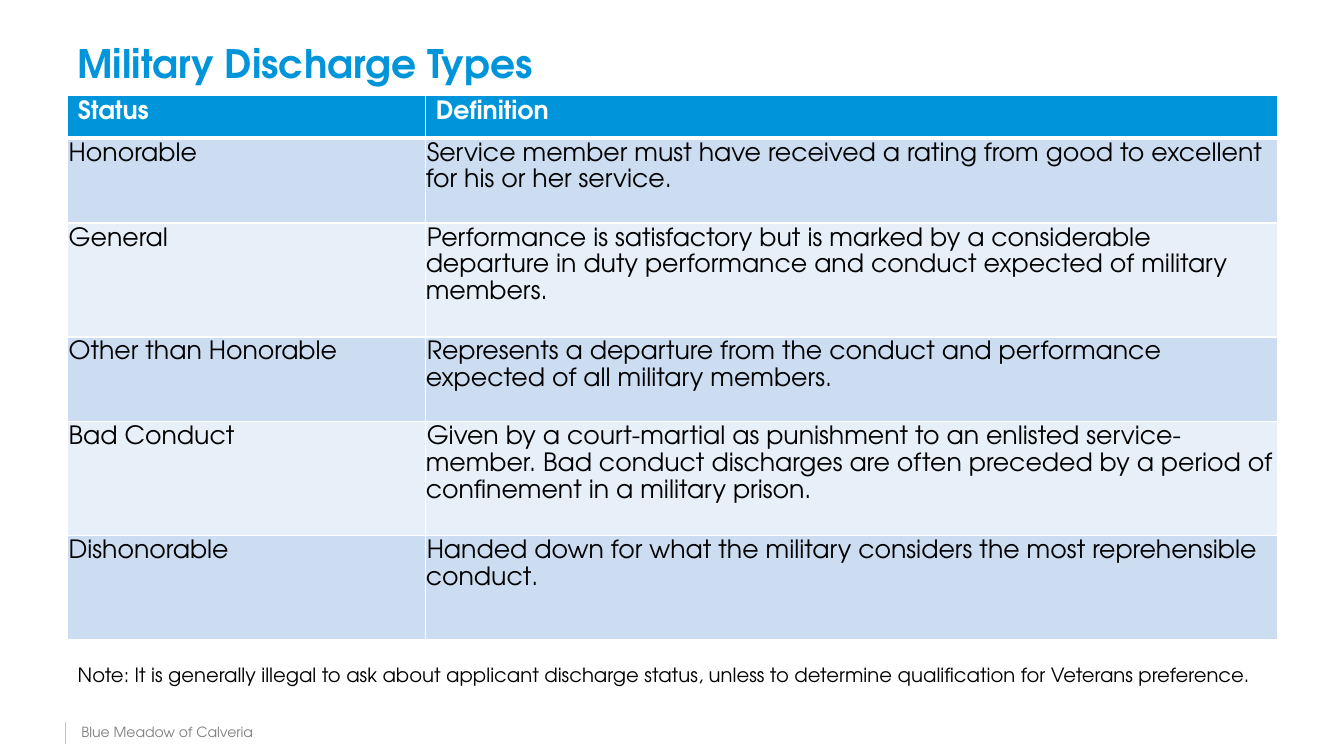
from lxml import etree
from pptx import Presentation
from pptx.dml.color import RGBColor
from pptx.enum.shapes import MSO_CONNECTOR
from pptx.enum.text import MSO_ANCHOR
from pptx.oxml.ns import qn
from pptx.util import Pt

STRAIGHT = MSO_CONNECTOR.STRAIGHT
MIDDLE = MSO_ANCHOR.MIDDLE
FONT = "TeX Gyre Adventor"
COLORS = {
    "blue": "0095DA",
    "band_dark": "CCDDF1",
    "band_light": "E7EFF8",
    "white": "FFFFFF",
    "black": "000000",
    "gray": "808080",
    "rule": "BEC0C2",
}
COLUMN_SHARES = (0.296, 0.704)
ROW_HEIGHTS = (30.2, 60.7, 81.4, 60.7, 81.4, 74.2)
HEADERS = ("Status", "Definition")
DISCHARGES = (
    ("Honorable",
     "Service member must have received a rating from good to excellent "
     "for his or her service."),
    ("General",
     "Performance is satisfactory but is marked by a considerable departure "
     "in duty performance and conduct expected of military members."),
    ("Other than Honorable",
     "Represents a departure from the conduct and performance expected of "
     "all military members."),
    ("Bad Conduct",
     "Given by a court-martial as punishment to an enlisted service-member. "
     "Bad conduct discharges are often preceded by a period of confinement "
     "in a military prison."),
    ("Dishonorable",
     "Handed down for what the military considers the most reprehensible "
     "conduct."),
)


def color(name):
    return RGBColor.from_string(COLORS[name])


def set_text(text_frame, text, size, color_name, bold=False):
    text_frame.text = text
    paragraph = text_frame.paragraphs[0]
    for run in paragraph.runs:
        run.font.name = FONT
        run.font.size = Pt(size)
        run.font.bold = bold
        run.font.color.rgb = color(color_name)
    return paragraph


def add_label(slide, left, top, width, height, text, size, color_name, bold=False):
    shape = slide.shapes.add_textbox(Pt(left), Pt(top), Pt(width), Pt(height))
    shape.text_frame.word_wrap = True
    shape.text_frame.vertical_anchor = MIDDLE
    set_text(shape.text_frame, text, size, color_name, bold)


def set_borders(cell, top_width, bottom_width):
    properties = cell._tc.get_or_add_tcPr()
    widths = {"lnL": 1, "lnR": 1, "lnT": top_width, "lnB": bottom_width}
    for side, width in widths.items():
        line = etree.SubElement(properties, qn(f"a:{side}"), w=str(Pt(width)))
        fill = etree.SubElement(line, qn("a:solidFill"))
        etree.SubElement(fill, qn("a:srgbClr"), val=COLORS["white"])


def fill_cell(cell, fill_name):
    cell.fill.solid()
    cell.fill.fore_color.rgb = color(fill_name)


def fill_header_cell(cell, text):
    set_borders(cell, 1, 3)
    fill_cell(cell, "blue")
    set_text(cell.text_frame, text, 18, "white", bold=True)


def fill_body_cell(cell, text, row_index):
    set_borders(cell, 3 if row_index == 1 else 1, 1)
    fill_cell(cell, "band_dark" if row_index % 2 else "band_light")
    cell.margin_left = cell.margin_right = cell.margin_bottom = 0
    cell.margin_top = Pt(0.8)
    paragraph = set_text(cell.text_frame, text, 18, "black")
    paragraph.line_spacing = 1.14
    properties = paragraph._p.get_or_add_pPr()
    properties.set("marL", "0")
    properties.set("indent", str(Pt(0.7)))


def add_discharge_table(slide, left, top, width):
    frame = slide.shapes.add_table(
        len(ROW_HEIGHTS), len(HEADERS),
        Pt(left), Pt(top), Pt(width), Pt(sum(ROW_HEIGHTS)))
    table = frame.table
    table.horz_banding = False
    for column, share in zip(table.columns, COLUMN_SHARES):
        column.width = Pt(width * share)
    for row, height in zip(table.rows, ROW_HEIGHTS):
        row.height = Pt(height)
    for column_index, text in enumerate(HEADERS):
        fill_header_cell(table.cell(0, column_index), text)
    for row_index, discharge in enumerate(DISCHARGES, start=1):
        for column_index, text in enumerate(discharge):
            fill_body_cell(table.cell(row_index, column_index), text, row_index)


def add_footer(slide, left, top, width, height):
    # Vertical rule
    rule = slide.shapes.add_connector(
        STRAIGHT, Pt(left), Pt(top + 2), Pt(left), Pt(top + height - 1))
    rule.line.color.rgb = color("rule")
    rule.line.width = Pt(0.5)
    etree.SubElement(rule._element.spPr, qn("a:effectLst"))
    # Organization name
    add_label(slide, left + 4.3, top, width - 4.3, height,
              "Blue Meadow of Calveria", 10, "gray")


def add_discharge_slide(presentation):
    slide = presentation.slides.add_slide(presentation.slide_layouts[6])
    left, width = 48.4, 864
    # Footer
    add_footer(slide, 46.8, 513.4, 210, 19.4)
    # Title
    add_label(slide, left, 21.6, width, 46.8,
              "Military Discharge Types", 28, "blue", bold=True)
    # Table
    add_discharge_table(slide, left, 68.4, width)
    # Note
    add_label(slide, left, 469.4, width, 24.5,
              "Note: It is generally illegal to ask about applicant discharge "
              "status, unless to determine qualification for Veterans preference.",
              14, "black")


def main():
    presentation = Presentation()
    presentation.slide_width = Pt(960)
    presentation.slide_height = Pt(540)
    add_discharge_slide(presentation)
    presentation.save("out.pptx")


if __name__ == "__main__":
    main()
